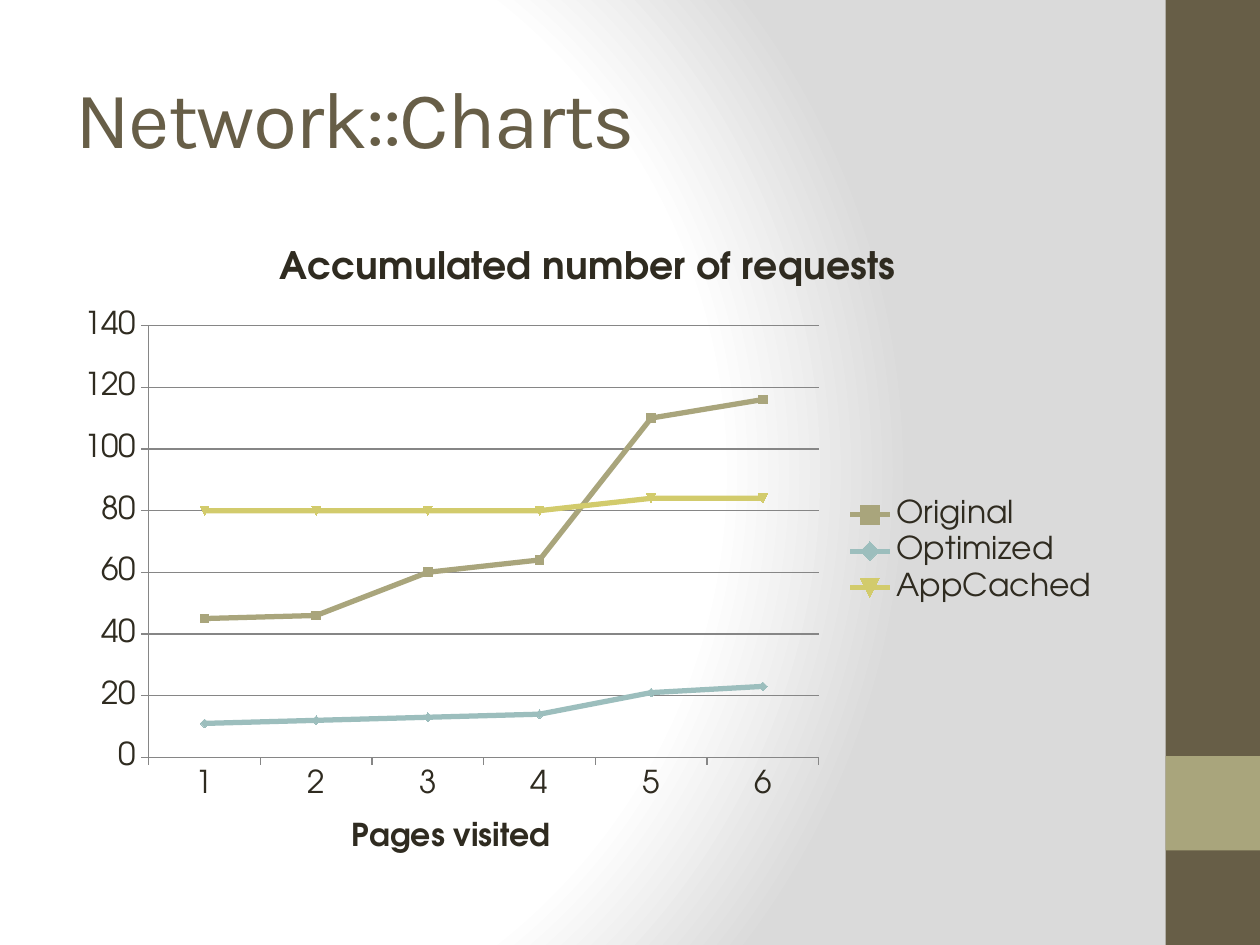
from dataclasses import dataclass

from lxml import etree
from pptx import Presentation
from pptx.chart.data import CategoryChartData
from pptx.dml.color import RGBColor
from pptx.enum.chart import XL_CHART_TYPE, XL_LEGEND_POSITION, XL_TICK_MARK
from pptx.enum.shapes import MSO_SHAPE
from pptx.enum.text import MSO_ANCHOR
from pptx.oxml.ns import qn
from pptx.util import Inches, Pt

RECT = MSO_SHAPE.RECTANGLE
MIDDLE = MSO_ANCHOR.MIDDLE
LINE_MARKERS = XL_CHART_TYPE.LINE_MARKERS
LEGEND_RIGHT = XL_LEGEND_POSITION.RIGHT
TICK_OUT = XL_TICK_MARK.OUTSIDE


@dataclass(frozen=True)
class Theme:
    brown: str = "675E47"
    olive: str = "A9A57C"
    teal: str = "9CBEBD"
    yellow: str = "D2CB6C"
    ink: str = "2F2B20"
    grid: str = "868686"
    white: str = "FFFFFF"
    grey: str = "DADADA"
    title_font: str = "Karla"
    chart_font: str = "TeX Gyre Adventor"
    title_size: float = 46
    chart_title_size: float = 21.6
    chart_size: float = 18


THEME = Theme()
PAGES = ["1", "2", "3", "4", "5", "6"]
REQUESTS = [
    ("Original", (45, 46, 60, 64, 110, 116), THEME.olive),
    ("Optimized", (11, 12, 13, 14, 21, 23), THEME.teal),
    ("AppCached", (80, 80, 80, 80, 84, 84), THEME.yellow),
]


def rgb(value):
    return RGBColor.from_string(value)


def set_font(font, name, size, color, bold=False):
    font.name = name
    font.size = Pt(size)
    font.bold = bold
    font.color.rgb = rgb(color)


def add_background(slide):
    """Circular gradient, white on the left and grey on the right."""
    fill = slide.background.fill
    fill.gradient()
    grad = fill._fill._gradFill
    for child in list(grad):
        grad.remove(child)
    stops = etree.SubElement(grad, qn("a:gsLst"))
    for pos, color in ((0, THEME.white), (75, THEME.white), (100, THEME.grey)):
        stop = etree.SubElement(stops, qn("a:gs"), pos=str(pos * 1000))
        etree.SubElement(stop, qn("a:srgbClr"), val=color)
    circle = etree.SubElement(grad, qn("a:path"), {"path": "circle"})
    etree.SubElement(circle, qn("a:fillToRect"),
                     l="20000", t="50000", r="100000", b="50000")


def add_sidebar(slide, left, top, width, height):
    """Dark band with a square accent near its foot."""
    for y, h, color in ((top, height, THEME.brown),
                        (top + height - 2 * width, width, THEME.olive)):
        sp = slide.shapes.add_shape(RECT, left, y, width, h)
        sp.shadow.inherit = False
        sp.fill.solid()
        sp.fill.fore_color.rgb = rgb(color)
        sp.line.fill.background()


def add_title(slide, text, left, top, width, height):
    tf = slide.shapes.add_textbox(left, top, width, height).text_frame
    tf.word_wrap = True
    tf.vertical_anchor = MIDDLE
    r = tf.paragraphs[0].add_run()
    r.text = text
    set_font(r.font, THEME.title_font, THEME.title_size, THEME.brown)
    r.font._element.set("spc", "-100")


def add_chart_text(tf, text, size):
    r = tf.paragraphs[0].add_run()
    r.text = text
    set_font(r.font, THEME.chart_font, size, THEME.ink, bold=True)


def add_request_chart(slide, left, top, width, height):
    data = CategoryChartData()
    data.categories = PAGES
    for name, values, _ in REQUESTS:
        data.add_series(name, values)
    chart = slide.shapes.add_chart(
        LINE_MARKERS, left, top, width, height, data).chart
    set_font(chart.font, THEME.chart_font, THEME.chart_size, THEME.ink)
    chart.has_title = True
    add_chart_text(chart.chart_title.text_frame,
                   "Accumulated number of requests", THEME.chart_title_size)
    chart.has_legend = True
    chart.legend.position = LEGEND_RIGHT
    chart.legend.include_in_layout = False

    # Axes
    cat_axis, val_axis = chart.category_axis, chart.value_axis
    add_chart_text(cat_axis.axis_title.text_frame,
                   "Pages visited", THEME.chart_size)
    val_axis.has_major_gridlines = True
    for axis in (cat_axis, val_axis):
        axis.major_tick_mark = TICK_OUT
    for part in (cat_axis, val_axis, val_axis.major_gridlines):
        part.format.line.color.rgb = rgb(THEME.grid)
        part.format.line.width = Pt(0.75)

    # Series
    plot = chart.plots[0]
    plot.vary_by_categories = False
    for series, (_, _, color) in zip(plot.series, REQUESTS):
        series.smooth = False
        series.format.line.color.rgb = rgb(color)
        series.format.line.width = Pt(3)
        fmt = series.marker.format
        fmt.fill.solid()
        fmt.fill.fore_color.rgb = rgb(color)
        fmt.line.color.rgb = rgb(color)


def main():
    prs = Presentation()
    prs.slide_width, prs.slide_height = Inches(10), Inches(7.5)
    slide = prs.slides.add_slide(prs.slide_layouts[6])
    add_background(slide)
    add_sidebar(slide, Inches(9.25), Inches(0), Inches(0.75), Inches(7.5))
    add_title(slide, "Network::Charts",
              Inches(0.5), Inches(0.3), Inches(8.33), Inches(1.25))
    add_request_chart(slide, Inches(0.5), Inches(1.75),
                      Inches(8.33), Inches(5.25))
    prs.save("out.pptx")


if __name__ == "__main__":
    main()
